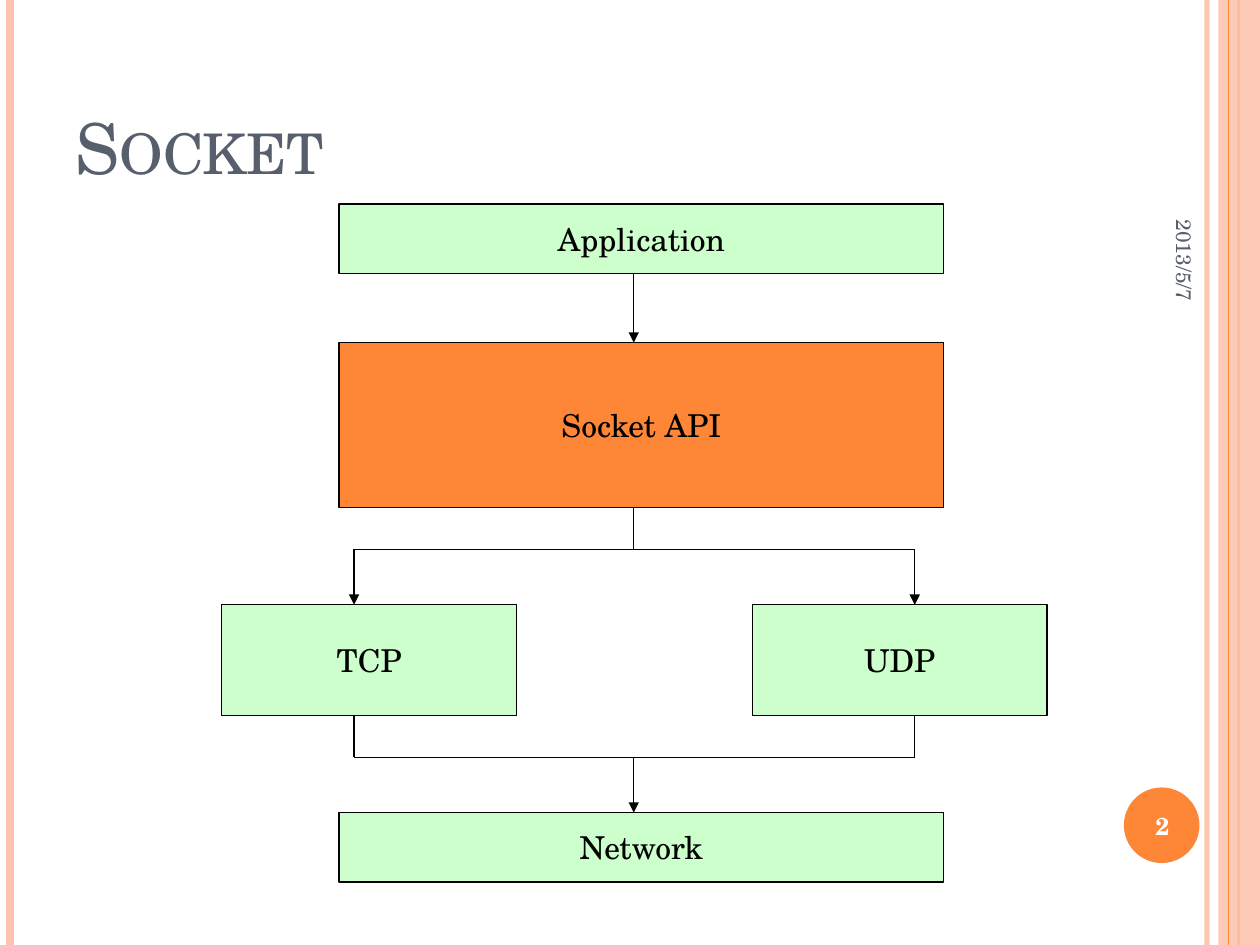
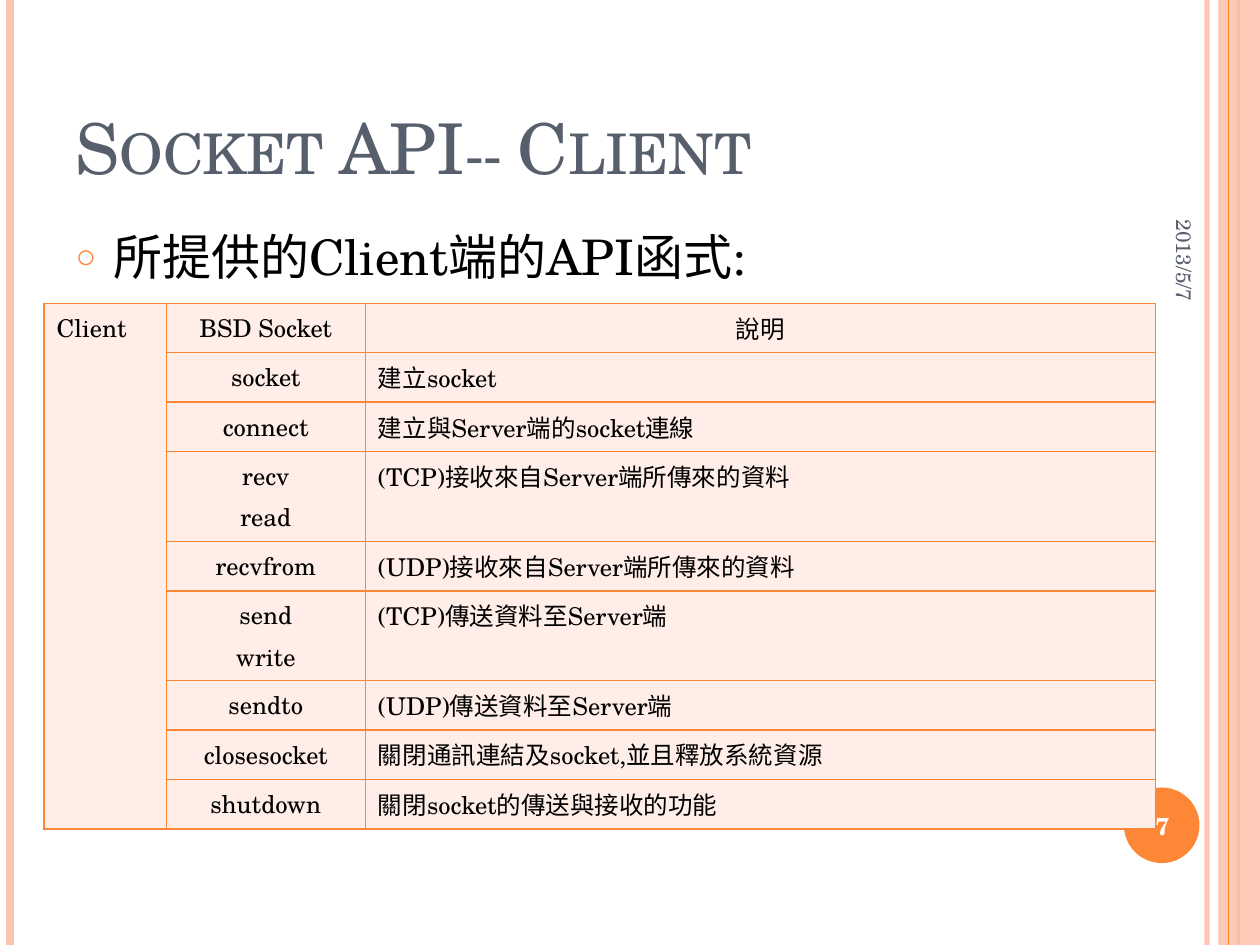
from typing import Any, NamedTuple

from lxml.etree import SubElement
from pptx import Presentation
from pptx.dml.color import RGBColor
from pptx.enum.shapes import MSO_CONNECTOR, MSO_SHAPE
from pptx.enum.text import MSO_ANCHOR as ANCHOR, MSO_AUTO_SIZE, PP_ALIGN as ALIGN
from pptx.oxml.ns import qn
from pptx.util import Inches, Pt

FONT = "TeX Gyre Schola"
BLACK = RGBColor(0x00, 0x00, 0x00)
WHITE = RGBColor(0xFF, 0xFF, 0xFF)
SLATE = RGBColor(0x57, 0x5F, 0x6D)
ORANGE = RGBColor(0xFE, 0x86, 0x37)
PEACH = RGBColor(0xFE, 0xC3, 0xAE)
BLUSH = RGBColor(0xFF, 0xED, 0xE8)
GREEN = RGBColor(0xCC, 0xFF, 0xCC)

DATE = "2013/5/7"
TITLE_FONT = {"size": Pt(40), "color": SLATE}
BODY_FONT = {"size": Pt(28), "color": BLACK}
BOX_FONT = {"size": Pt(18), "color": BLACK}
CELL_FONT = {"size": Pt(14), "color": BLACK}
DATE_FONT = {"size": Pt(12), "color": SLATE}
NUMBER_FONT = {"size": Pt(14), "color": WHITE, "bold": True}


class Box(NamedTuple):
    text: str
    left: float
    top: float
    width: float
    height: float
    fill: RGBColor = GREEN


class Line(NamedTuple):
    x1: float
    y1: float
    x2: float
    y2: float
    arrow: bool = False
    color: RGBColor = BLACK
    width: float = 0.75
    alpha: int = 100


def band(x: float, color: RGBColor, width: float, alpha: int = 100) -> Line:
    return Line(x, 0, x, 7.5, False, color, width, alpha)


LEFT_BANDS = [band(9.58, PEACH, 3, 93), band(0.08, PEACH, 4.5), band(9.83, ORANGE, 1.5)]
STRIP_LINE = band(9.75, ORANGE, 0.75)

BOXES = [
    Box("Application", 2.69, 1.62, 4.8, 0.55),
    Box("Socket API", 2.69, 2.72, 4.8, 1.31, ORANGE),
    Box("TCP", 1.76, 4.8, 2.34, 0.88),
    Box("UDP", 5.97, 4.8, 2.34, 0.88),
    Box("Network", 2.69, 6.45, 4.8, 0.55),
]
TRUNK, BRANCHES = 5.03, (2.81, 7.26)
SPLIT, JOIN = 4.36, 6.01
FLOW = [
    Line(TRUNK, 2.17, TRUNK, 2.72, True),
    Line(TRUNK, 4.03, TRUNK, SPLIT),
    *[Line(BRANCHES[0], y, BRANCHES[1], y) for y in (SPLIT, JOIN)],
    *[Line(x, SPLIT, x, 4.8, True) for x in BRANCHES],
    *[Line(x, 5.68, x, JOIN) for x in BRANCHES],
    Line(TRUNK, JOIN, TRUNK, 6.45, True),
]

COL_WIDTHS = (0.97, 1.58, 6.27)
FUNCTIONS = [
    ("BSD Socket", "說明"),
    ("socket", "建立socket"),
    ("connect", "建立與Server端的socket連線"),
    ("recv\nread", "(TCP)接收來自Server端所傳來的資料"),
    ("recvfrom", "(UDP)接收來自Server端所傳來的資料"),
    ("send\nwrite", "(TCP)傳送資料至Server端"),
    ("sendto", "(UDP)傳送資料至Server端"),
    ("closesocket", "關閉通訊連結及socket,並且釋放系統資源"),
    ("shutdown", "關閉socket的傳送與接收的功能"),
]


def write(tf: Any, text: str, fmt: dict, align: Any = ALIGN.LEFT) -> None:
    tf.text = text
    for p in tf.paragraphs:
        p.alignment = align
        for r in p.runs:
            r.font.name = FONT
            for name, value in fmt.items():
                if name == "color":
                    r.font.color.rgb = value
                else:
                    setattr(r.font, name, value)


def set_alpha(parent: Any, percent: int) -> None:
    clr = parent.find(".//" + qn("a:srgbClr"))
    SubElement(clr, qn("a:alpha"), val=str(percent * 1000))


def place(sp: Any, left: float, top: float, width: float, height: float) -> None:
    sp.left, sp.top = Inches(left), Inches(top)
    sp.width, sp.height = Inches(width), Inches(height)


def draw_line(shapes: Any, line: Line) -> None:
    ends = [Inches(v) for v in line[:4]]
    cn = shapes.add_connector(MSO_CONNECTOR.STRAIGHT, *ends)
    cn.line.color.rgb = line.color
    cn.line.width = Pt(line.width)
    ln = cn.line._get_or_add_ln()
    if line.alpha < 100:
        set_alpha(ln, line.alpha)
    if line.arrow:
        SubElement(ln, qn("a:tailEnd"), type="triangle")
    SubElement(cn._element.spPr, qn("a:effectLst"))


def draw_shape(shapes: Any, kind: Any, box: Box, outlined: bool = False) -> Any:
    sp = shapes.add_shape(kind, *[Inches(v) for v in box[1:5]])
    sp.shadow.inherit = False
    sp.fill.solid()
    sp.fill.fore_color.rgb = box.fill
    if outlined:
        sp.line.color.rgb = BLACK
        sp.line.width = Pt(0.75)
    else:
        sp.line.fill.background()
    if box.text:
        tf = sp.text_frame
        tf.word_wrap = False
        tf.vertical_anchor = ANCHOR.MIDDLE
        write(tf, box.text, BOX_FONT, ALIGN.CENTER)
    return sp


def draw_label(s: Any, box: Box, fmt: dict, align: Any) -> Any:
    sp = s.shapes.add_textbox(*[Inches(v) for v in box[1:5]])
    sp.text_frame.word_wrap = True
    sp.text_frame.vertical_anchor = ANCHOR.MIDDLE
    write(sp.text_frame, box.text, fmt, align)
    return sp


def add_slide(prs: Any, layout: int, title: str) -> Any:
    s = prs.slides.add_slide(prs.slide_layouts[layout])
    for line in LEFT_BANDS:
        draw_line(s.shapes, line)
    strip = draw_shape(s.shapes, MSO_SHAPE.RECTANGLE, Box("", 9.67, 0, 0.33, 7.5, PEACH))
    set_alpha(strip._element.spPr, 87)
    draw_line(s.shapes, STRIP_LINE)
    draw_shape(s.shapes, MSO_SHAPE.OVAL, Box("", 8.92, 6.25, 0.6, 0.6, ORANGE))

    sp = s.shapes.title
    place(sp, 0.5, 0.3, 8.17, 1.25)
    tf = sp.text_frame
    tf.auto_size = MSO_AUTO_SIZE.NONE
    tf.vertical_anchor = ANCHOR.BOTTOM
    write(tf, title, TITLE_FONT)
    tf.paragraphs[0].runs[0].font._element.set("cap", "small")
    return s


def add_footer(s: Any, number: int) -> None:
    date = draw_label(s, Box(DATE, 8.3, 1.18, 2.2, 0.42), DATE_FONT, ALIGN.RIGHT)
    date.rotation = 90
    draw_label(s, Box(str(number), 8.89, 6.27, 0.67, 0.57), NUMBER_FONT, ALIGN.CENTER)


def fill_body(sp: Any, text: str) -> None:
    place(sp, 0.5, 1.75, 8.17, 5.33)
    tf = sp.text_frame
    tf.auto_size = MSO_AUTO_SIZE.NONE
    write(tf, text, BODY_FONT)
    p = tf.paragraphs[0]
    p.space_before = Pt(6)
    ppr = p._p.get_or_add_pPr()
    ppr.set("marL", str(Inches(0.3)))
    ppr.set("indent", str(-Inches(0.3)))
    SubElement(SubElement(ppr, qn("a:buClr")), qn("a:srgbClr"), val=str(ORANGE))
    SubElement(ppr, qn("a:buSzPct"), val="70000")
    SubElement(ppr, qn("a:buChar"), char="○")


def format_cell(cell: Any, text: str, align: Any) -> None:
    write(cell.text_frame, text, CELL_FONT, align)
    for p in cell.text_frame.paragraphs:
        before = SubElement(p._p.get_or_add_pPr(), qn("a:spcBef"))
        SubElement(before, qn("a:spcPct"), val="20000")


def draw_table(s: Any) -> None:
    size = [Inches(v) for v in (0.35, 2.41, 8.82, 4.02)]
    tbl = s.shapes.add_table(len(FUNCTIONS), len(COL_WIDTHS), *size).table
    for col, width in zip(tbl.columns, COL_WIDTHS):
        col.width = Inches(width)
    for i, (name, note) in enumerate(FUNCTIONS):
        tbl.rows[i].height = Inches(0.71 if "\n" in name else 0.39)
        format_cell(tbl.cell(i, 1), name, ALIGN.CENTER)
        format_cell(tbl.cell(i, 2), note, ALIGN.LEFT if i else ALIGN.CENTER)
    tbl.cell(0, 0).merge(tbl.cell(len(FUNCTIONS) - 1, 0))
    format_cell(tbl.cell(0, 0), "Client", ALIGN.LEFT)
    for cell in tbl.iter_cells():
        tcpr = cell._tc.get_or_add_tcPr()
        for side in ("lnL", "lnR", "lnT", "lnB"):
            ln = SubElement(tcpr, qn(f"a:{side}"), w=str(Pt(1)))
            SubElement(SubElement(ln, qn("a:solidFill")), qn("a:srgbClr"), val=str(ORANGE))
        cell.fill.solid()
        cell.fill.fore_color.rgb = BLUSH


def build_socket(prs: Any) -> None:
    s = add_slide(prs, 5, "Socket")
    diagram = s.shapes.add_group_shape().shapes
    for box in BOXES:
        draw_shape(diagram, MSO_SHAPE.RECTANGLE, box, outlined=True)
    for line in FLOW:
        draw_line(diagram, line)
    add_footer(s, 2)


def build_client(prs: Any) -> None:
    s = add_slide(prs, 1, "Socket API-- Client")
    fill_body(s.placeholders[1], "所提供的Client端的API函式:")
    draw_table(s)
    add_footer(s, 7)


def main() -> None:
    prs = Presentation()
    prs.slide_width, prs.slide_height = Inches(10), Inches(7.5)
    build_socket(prs)
    build_client(prs)
    prs.save("out.pptx")


if __name__ == "__main__":
    main()
